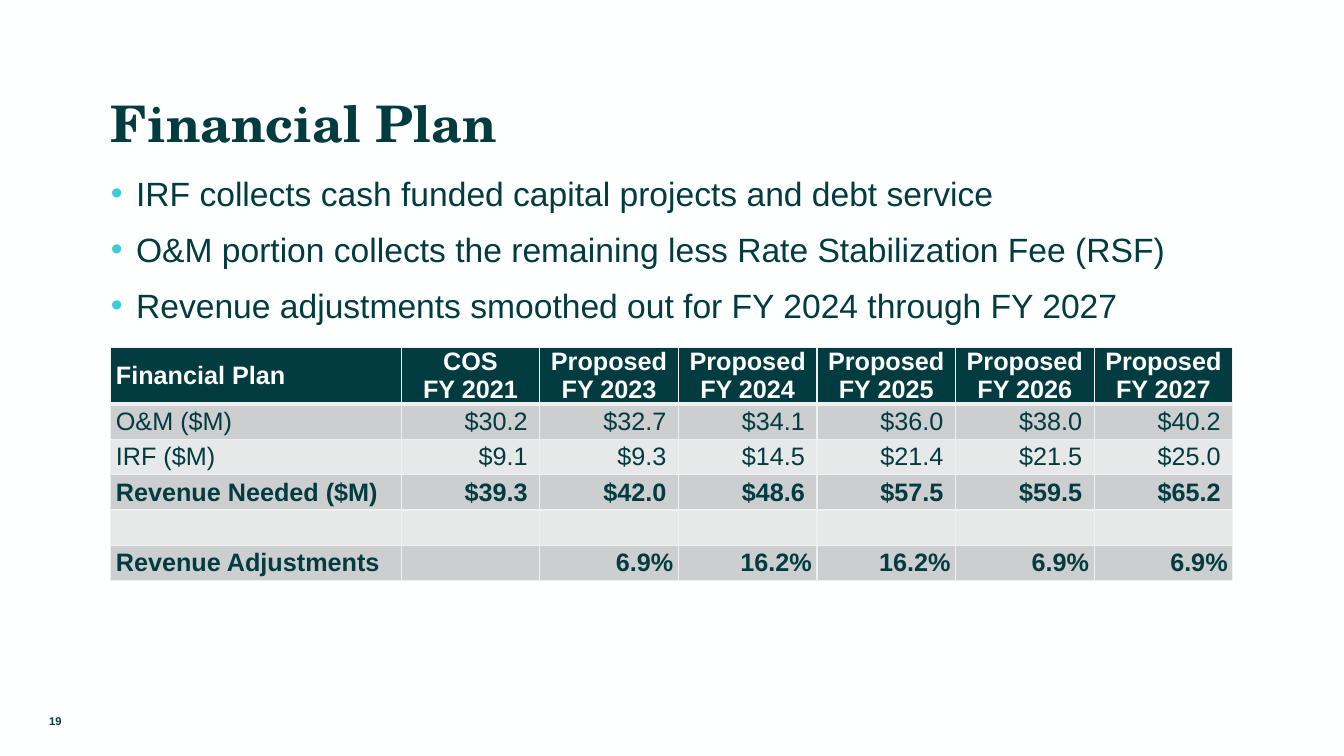
from dataclasses import dataclass

from lxml import etree
from pptx import Presentation
from pptx.dml.color import RGBColor
from pptx.enum.text import MSO_ANCHOR, MSO_AUTO_SIZE, PP_ALIGN
from pptx.oxml.ns import qn
from pptx.util import Inches, Pt

LEFT, MID, RIGHT = PP_ALIGN.LEFT, PP_ALIGN.CENTER, PP_ALIGN.RIGHT
TOP, CENTER, BOTTOM = MSO_ANCHOR.TOP, MSO_ANCHOR.MIDDLE, MSO_ANCHOR.BOTTOM
FIXED = MSO_AUTO_SIZE.NONE


@dataclass(frozen=True)
class Theme:
    paper: str = "FEFFFF"
    ink: str = "023B40"
    dot: str = "3DCCD5"
    rule: str = "F0F0F0"
    dark: str = "CCCECF"
    light: str = "E7E8E8"
    serif: str = "TeX Gyre Schola"
    sans: str = "Arial"
    title: int = 36
    body: int = 24
    cell: int = 18
    note: int = 8


THEME = Theme()
UNIT = Inches(0.1)
EDGE, SPAN = 11, 111.3
LABEL, YEAR = 28.8, 13.75
HEAD, ROW = 5.55, 3.5

POINTS = [
    "IRF collects cash funded capital projects and debt service",
    "O&M portion collects the remaining less Rate Stabilization Fee (RSF)",
    "Revenue adjustments smoothed out for FY 2024 through FY 2027",
]
HEADS = ["Financial Plan", "COS\nFY 2021"] + [
    f"Proposed\nFY {year}" for year in range(2023, 2028)
]
ROWS = [
    ["O&M ($M)", "$30.2", "$32.7", "$34.1", "$36.0", "$38.0", "$40.2"],
    ["IRF ($M)", "$9.1", "$9.3", "$14.5", "$21.4", "$21.5", "$25.0"],
    ["Revenue Needed ($M)", "$39.3", "$42.0", "$48.6", "$57.5", "$59.5", "$65.2"],
    [""] * 7,
    ["Revenue Adjustments", "", "6.9%", "16.2%", "16.2%", "6.9%", "6.9%"],
]


def grid(*cells):
    return [round(cell * UNIT) for cell in cells]


def color(code):
    return RGBColor.from_string(code)


def write(frame, text, *, size, font=THEME.sans, ink=THEME.ink, bold=False, align=LEFT):
    frame.text = text
    for para in frame.paragraphs:
        para.alignment = align
        for style in [para.font] + [run.font for run in para.runs]:
            style.name = font
            style.size = Pt(size)
            style.bold = bold
            style.color.rgb = color(ink)


def place(shape, area, anchor, inset=0):
    shape.left, shape.top, shape.width, shape.height = grid(*area)
    frame = shape.text_frame
    frame.auto_size = FIXED
    frame.word_wrap = True
    frame.vertical_anchor = anchor
    frame.margin_left = frame.margin_right = frame.margin_bottom = 0
    frame.margin_top = Inches(inset)
    return frame


def bullet(para):
    para.space_before = Pt(10)
    para.line_spacing = 1.04
    props = para._p.get_or_add_pPr()
    props.set("marL", str(Inches(0.25)))
    props.set("indent", str(-Inches(0.25)))
    tint = etree.SubElement(props, qn("a:buClr"))
    etree.SubElement(tint, qn("a:srgbClr"), val=THEME.dot)
    etree.SubElement(props, qn("a:buFont"), typeface=THEME.sans)
    etree.SubElement(props, qn("a:buChar"), char="•")


def border(cell, row):
    widths = {"L": 1, "R": 1, "T": 3 if row == 1 else 1, "B": 3 if row == 0 else 1}
    props = cell._tc.get_or_add_tcPr()
    for side, width in widths.items():
        line = etree.SubElement(props, qn(f"a:ln{side}"), w=str(Pt(width)))
        fill = etree.SubElement(line, qn("a:solidFill"))
        etree.SubElement(fill, qn("a:srgbClr"), val=THEME.rule)


def fill_cell(cell, text, row, col):
    head = row == 0
    border(cell, row)
    cell.fill.solid()
    shade = THEME.ink if head else THEME.dark if row % 2 else THEME.light
    cell.fill.fore_color.rgb = color(shade)
    cell.vertical_anchor = CENTER
    cell.margin_left = Inches(0.05)
    cell.margin_right = Inches(0.12 if text.startswith("$") else 0.05)
    cell.margin_top = cell.margin_bottom = 0
    write(
        cell.text_frame,
        text,
        size=THEME.cell,
        ink=THEME.paper if head else THEME.ink,
        bold=head or row >= 3,
        align=LEFT if col == 0 else MID if head else RIGHT,
    )


def add_plan(slide):
    data = [HEADS] + ROWS
    area = grid(EDGE, 34.5, SPAN, HEAD + ROW * len(ROWS))
    table = slide.shapes.add_table(len(data), len(HEADS), *area).table
    for col, part in enumerate(table.columns):
        part.width = grid(YEAR if col else LABEL)[0]
    for row, texts in enumerate(data):
        table.rows[row].height = grid(ROW if row else HEAD)[0]
        for col, text in enumerate(texts):
            fill_cell(table.cell(row, col), text, row, col)


def main():
    deck = Presentation()
    deck.slide_width, deck.slide_height = grid(133.33, 75)
    slide = deck.slides.add_slide(deck.slide_layouts[1])
    slide.background.fill.solid()
    slide.background.fill.fore_color.rgb = color(THEME.paper)

    title = place(slide.shapes.title, (EDGE, 6.4, SPAN, 8.7), BOTTOM, 0.21)
    write(title, "Financial Plan", size=THEME.title, font=THEME.serif, bold=True)

    body = place(slide.placeholders[1], (EDGE, 17, SPAN, 48.2), TOP)
    write(body, "\n".join(POINTS), size=THEME.body)
    for para in body.paragraphs:
        bullet(para)

    add_plan(slide)

    area = (0, 69.5, EDGE, 4)
    number = place(slide.shapes.add_textbox(*grid(*area)), area, CENTER)
    write(number, "19", size=THEME.note, bold=True, align=MID)
    deck.save("out.pptx")


if __name__ == "__main__":
    main()
